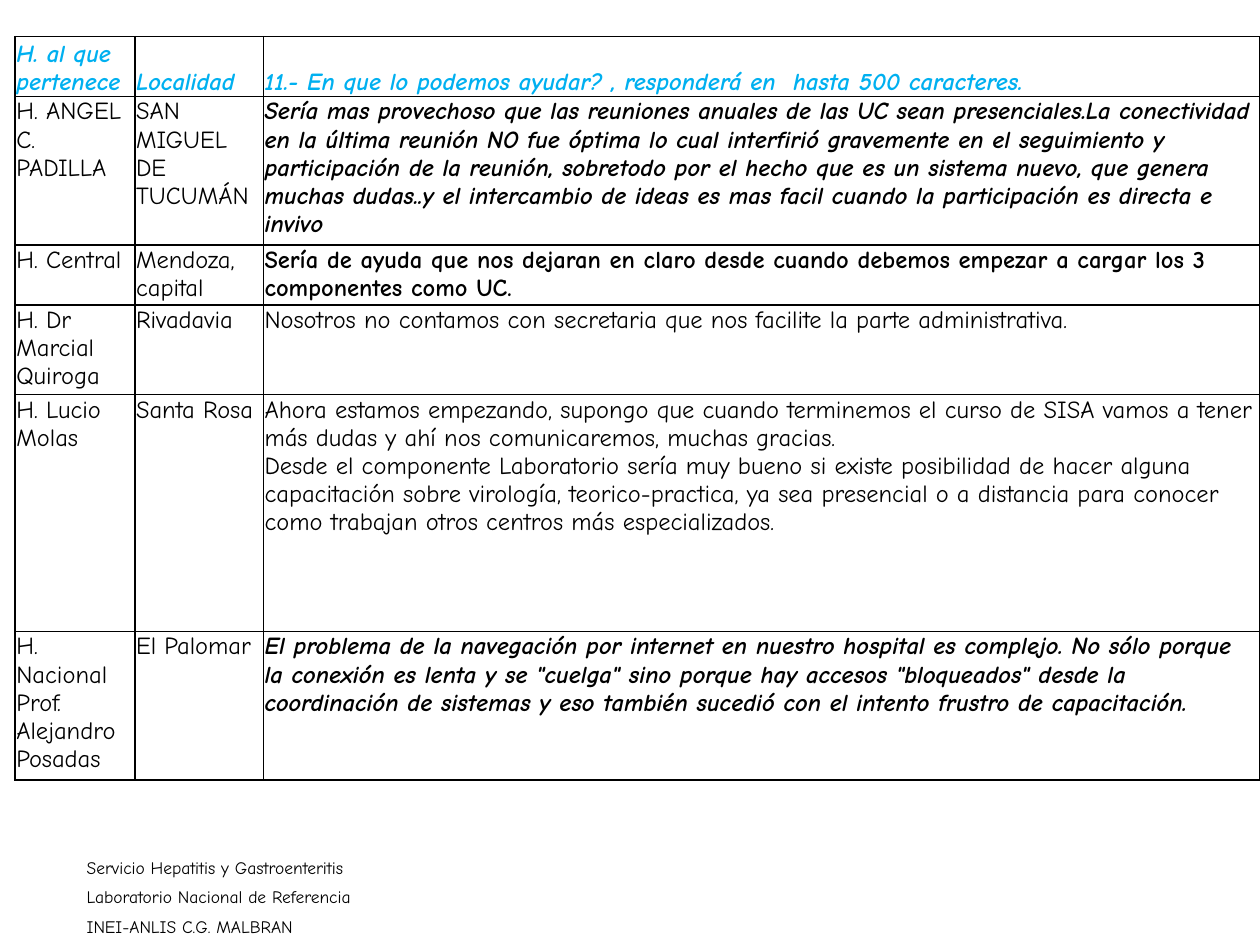
from lxml import etree
from pptx import Presentation
from pptx.dml.color import RGBColor
from pptx.enum.text import MSO_ANCHOR
from pptx.oxml.ns import qn
from pptx.util import Inches, Pt

TOP, BOTTOM = MSO_ANCHOR.TOP, MSO_ANCHOR.BOTTOM
FONT = "Comic Neue"
COLORS = {"head": "00B0F0", "text": "000000", "line": "000000"}
COLS = [0.95, 1.02, 7.91]
HEIGHTS = [0.47, 1.17, 0.47, 0.71, 1.88, 1.17]
HEAD = ["H. al que pertenece", "Localidad",
        "11.- En que lo podemos ayudar? , responderá en  hasta 500 caracteres."]
# hospital, town, answer, answer is bold, answer is italic
ROWS = [
    ("H. ANGEL C. PADILLA", "SAN MIGUEL DE TUCUMÁN",
     "Sería mas provechoso que las reuniones anuales de las UC sean "
     "presenciales.La conectividad en la última reunión NO fue óptima lo cual "
     "interfirió gravemente en el seguimiento y participación de la reunión, "
     "sobretodo por el hecho que es un sistema nuevo, que genera muchas "
     "dudas..y el intercambio de ideas es mas facil cuando la participación "
     "es directa e invivo", True, True),
    ("H. Central", "Mendoza, capital",
     "Sería de ayuda que nos dejaran en claro desde cuando debemos empezar a "
     "cargar los 3 componentes como UC.", True, False),
    ("H. Dr Marcial Quiroga", "Rivadavia",
     "Nosotros no contamos con secretaria que nos facilite la parte "
     "administrativa.", False, False),
    ("H. Lucio Molas", "Santa Rosa",
     "Ahora estamos empezando, supongo que cuando terminemos el curso de SISA "
     "vamos a tener más dudas y ahí nos comunicaremos, muchas gracias.\n"
     "Desde el componente Laboratorio sería muy bueno si existe posibilidad "
     "de hacer alguna capacitación sobre virología, teorico-practica, ya sea "
     "presencial o a distancia para conocer como trabajan otros centros más "
     "especializados.", False, False),
    ("H. Nacional Prof. Alejandro Posadas", "El Palomar",
     "El problema de la navegación por internet en nuestro hospital es "
     "complejo. No sólo porque la conexión es lenta y se \"cuelga\" sino "
     "porque hay accesos \"bloqueados\" desde la coordinación de sistemas y "
     "eso también sucedió con el intento frustro de capacitación.", True, True),
]
FOOTER = ["Servicio Hepatitis y Gastroenteritis",
          "Laboratorio Nacional de Referencia", "INEI-ANLIS C.G. MALBRAN"]


def write(frame, text, size, color, bold=False, italic=False, gap=0):
    frame.text = text
    for i, para in enumerate(frame.paragraphs):
        para.space_before = Pt(gap if i else 0)
        for run in para.runs:
            font = run.font
            font.name, font.size = FONT, Pt(size)
            font.bold, font.italic = bold, italic
            font.color.rgb = RGBColor.from_string(COLORS[color])


def add_borders(cell):
    """Draw a 1 pt line on all four sides; borders must precede the fill."""
    props = cell._tc.get_or_add_tcPr()
    for i, side in enumerate(("a:lnL", "a:lnR", "a:lnT", "a:lnB")):
        line = etree.Element(qn(side), w=str(Pt(1)))
        fill = etree.SubElement(line, qn("a:solidFill"))
        etree.SubElement(fill, qn("a:srgbClr"), val=COLORS["line"])
        props.insert(i, line)


def fill_cell(cell, text, color, bold, italic, anchor):
    cell.margin_left = cell.margin_right = cell.margin_top = Inches(0.01)
    cell.margin_bottom = 0
    cell.vertical_anchor = anchor
    cell.fill.background()
    add_borders(cell)
    write(cell.text_frame, text, 14, color, bold, italic)


def add_answers(slide, left, top):
    table = slide.shapes.add_table(
        len(HEIGHTS), len(COLS), Inches(left), Inches(top),
        Inches(sum(COLS)), Inches(sum(HEIGHTS))).table
    for col, width in zip(table.columns, COLS):
        col.width = Inches(width)
    for row, height in zip(table.rows, HEIGHTS):
        row.height = Inches(height)
    for c, text in enumerate(HEAD):
        fill_cell(table.cell(0, c), text, "head", True, True, BOTTOM)
    for r, (*texts, bold, italic) in enumerate(ROWS, 1):
        for c, text in enumerate(texts):
            answer = c == 2
            fill_cell(table.cell(r, c), text, "text",
                      answer and bold, answer and italic, TOP)


def add_footer(slide, left, top, width, height):
    box = slide.shapes.add_textbox(Inches(left), Inches(top),
                                   Inches(width), Inches(height))
    box.text_frame.word_wrap = True
    write(box.text_frame, "\n".join(FOOTER), 10, "text", gap=5)


def main():
    deck = Presentation()
    deck.slide_width, deck.slide_height = Inches(10), Inches(7.5)
    slide = deck.slides.add_slide(deck.slide_layouts[6])
    add_footer(slide, 0.59, 6.75, 3.5, 0.75)
    add_answers(slide, 0.12, 0.29)
    deck.save("out.pptx")


if __name__ == "__main__":
    main()
